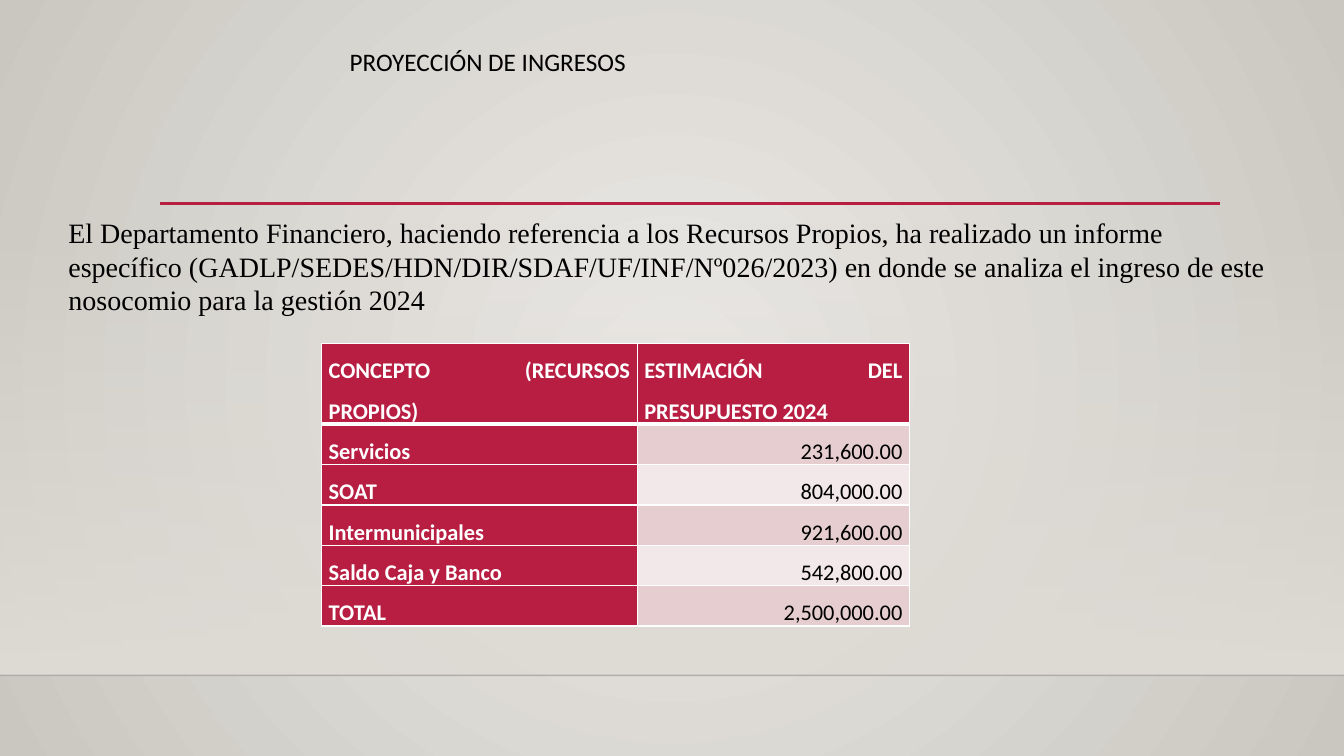
from pptx import Presentation
from pptx.dml.color import RGBColor
from pptx.enum.shapes import MSO_CONNECTOR, MSO_SHAPE
from pptx.enum.text import MSO_AUTO_SIZE, PP_ALIGN
from pptx.oxml import parse_xml
from pptx.oxml.ns import nsdecls, qn
from pptx.util import Inches, Pt
from lxml.etree import SubElement

WIDTH, HEIGHT = 13.33, 7.5


def color(code):
    return RGBColor.from_string(code)


def add(parent, tag, **attrs):
    return SubElement(parent, qn(tag), {k: str(v) for k, v in attrs.items()})


class Page:
    red, black, white = "B71E42", "000000", "FFFFFF"
    bands = "E6CDCF", "F3E8E9"
    sans, serif = "Calibri", "Times New Roman"

    def __init__(self, slide):
        self.slide = slide

    def blend(self, holder, stops, shade):
        """Fill the gradient of holder with (place, color, opacity) stops."""
        grad = next(holder.iter(qn("a:gradFill")))
        for child in list(grad):
            grad.remove(child)
        group = add(grad, "a:gsLst")
        for place, code, alpha in stops:
            stop = add(group, "a:gs", pos=place * 1000)
            tint = add(stop, "a:srgbClr", val=code)
            if alpha < 100:
                add(tint, "a:alpha", val=alpha * 1000)
        grad.append(parse_xml(shade))

    def backdrop(self, inner, outer):
        self.slide.background.fill.gradient()
        shade = (f'<a:path {nsdecls("a")} path="circle"><a:fillToRect l="50000" '
                 't="50000" r="50000" b="50000"/></a:path>')
        self.blend(self.slide.element, [(0, inner, 100), (100, outer, 100)], shade)

    def fade(self, x, y, w, h, code):
        shape = self.slide.shapes.add_shape(
            MSO_SHAPE.RECTANGLE, Inches(x), Inches(y), Inches(w), Inches(h))
        shape.shadow.inherit = False
        shape.line.fill.background()
        shape.fill.gradient()
        shade = f'<a:lin {nsdecls("a")} ang="5400000" scaled="0"/>'
        self.blend(shape.element.spPr, [(0, code, 0), (100, code, 100)], shade)

    def rule(self, left, right, y, code, size, alpha=100):
        line = self.slide.shapes.add_connector(
            MSO_CONNECTOR.STRAIGHT, Inches(left), Inches(y), Inches(right), Inches(y))
        line.line.color.rgb = color(code)
        line.line.width = Pt(size)
        props = line.element.spPr
        if alpha < 100:
            add(next(props.iter(qn("a:srgbClr"))), "a:alpha", val=alpha * 1000)
        add(props, "a:effectLst")

    def style(self, para, text, font, size, code, bold=False):
        para.text = text
        para.font.name = font
        para.font.size = Pt(size)
        para.font.bold = bold
        para.font.color.rgb = color(code)

    def text(self, x, y, w, h, words, font, size, wrap=True):
        box = self.slide.shapes.add_textbox(Inches(x), Inches(y), Inches(w), Inches(h))
        frame = box.text_frame
        frame.word_wrap = wrap
        frame.auto_size = MSO_AUTO_SIZE.SHAPE_TO_FIT_TEXT
        self.style(frame.paragraphs[0], words, font, size, self.black)

    def border(self, cell, head):
        props = cell._tc.get_or_add_tcPr()
        for spot, side in enumerate(("L", "R", "T", "B")):
            size = 3 if head and side == "B" else 1
            edge = parse_xml(f'<a:ln{side} {nsdecls("a")} w="{Pt(size)}"/>')
            add(add(edge, "a:solidFill"), "a:srgbClr", val=self.white)
            props.insert(spot, edge)

    def table(self, x, y, widths, heights, rows):
        grid = self.slide.shapes.add_table(
            len(rows), len(widths), Inches(x), Inches(y),
            Inches(sum(widths)), Inches(sum(heights))).table
        for col, width in zip(grid.columns, widths):
            col.width = Inches(width)
        for r, (row, height) in enumerate(zip(rows, heights)):
            grid.rows[r].height = Inches(height)
            for c, words in enumerate(row):
                cell = grid.cell(r, c)
                value = r > 0 and c > 0
                cell.margin_left = cell.margin_right = Inches(0.07)
                cell.margin_top = cell.margin_bottom = 0
                cell.fill.solid()
                cell.fill.fore_color.rgb = color(
                    self.bands[(r - 1) % 2] if value else self.red)
                para = cell.text_frame.paragraphs[0]
                para.alignment = PP_ALIGN.RIGHT if value else PP_ALIGN.JUSTIFY
                para.line_spacing = 1.5
                self.style(para, words, self.sans, 16,
                           self.black if value else self.white, not value)
                self.border(cell, r == 0)


def main():
    deck = Presentation()
    deck.slide_width, deck.slide_height = Inches(WIDTH), Inches(HEIGHT)
    page = Page(deck.slides.add_slide(deck.slide_layouts[6]))

    # Background and lines
    page.backdrop("ECEAE7", "CAC7C1")
    page.fade(0, 2.21, WIDTH, 4.49, "DFDBD5")
    page.rule(0, WIDTH, 6.7, "000001", 1, alpha=20)
    page.rule(1.59, 12.1, 2.02, page.red, 2.5)

    # Title and introduction
    page.text(3.37, 0.41, 3.38, 0.4, "PROYECCIÓN DE INGRESOS", page.sans, 18, wrap=False)
    page.text(0.58, 2.09, 12.23, 1.11,
              "El Departamento Financiero, haciendo referencia a los Recursos Propios, "
              "ha realizado un informe específico "
              "(GADLP/SEDES/HDN/DIR/SDAF/UF/INF/Nº026/2023) en donde se analiza el "
              "ingreso de este nosocomio para la gestión 2024", page.serif, 20)

    # Income table
    rows = [
        ("CONCEPTO (RECURSOS PROPIOS)", "ESTIMACIÓN DEL PRESUPUESTO 2024"),
        ("Servicios", "231,600.00"),
        ("SOAT", "804,000.00"),
        ("Intermunicipales", "921,600.00"),
        ("Saldo Caja y Banco", "542,800.00"),
        ("TOTAL", "2,500,000.00"),
    ]
    page.table(3.19, 3.41, [3.13, 2.7], [0.8] + [0.4] * 5, rows)

    deck.save("out.pptx")


if __name__ == "__main__":
    main()
